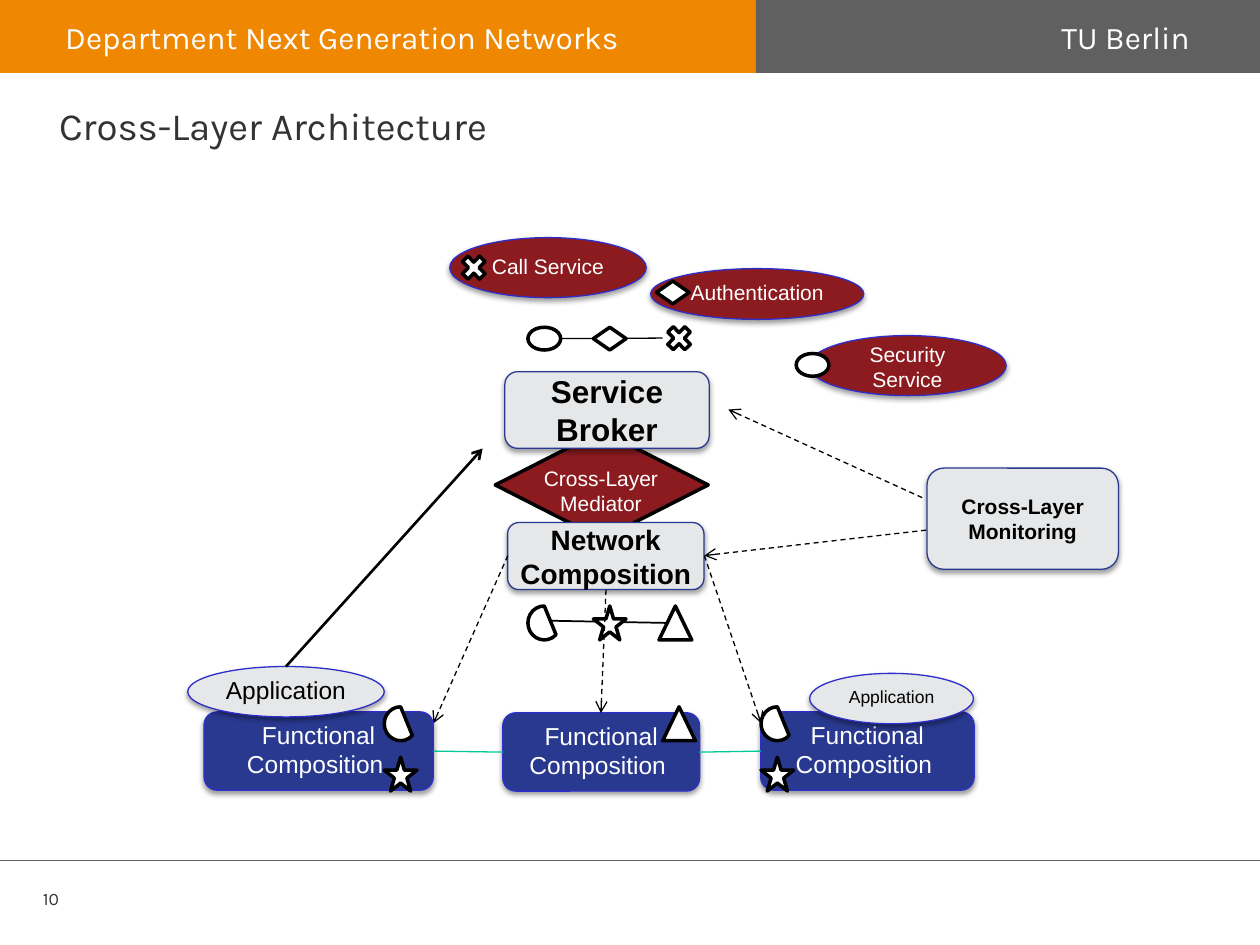
from dataclasses import dataclass

from lxml.etree import SubElement
from pptx import Presentation
from pptx.dml.color import RGBColor
from pptx.enum.dml import MSO_LINE
from pptx.enum.shapes import MSO_CONNECTOR, MSO_SHAPE
from pptx.enum.text import MSO_ANCHOR, MSO_AUTO_SIZE, PP_ALIGN
from pptx.oxml.ns import qn
from pptx.util import Pt

COLORS = {
    "orange": "F08700", "gray": "606060", "ink": "333333", "black": "000000",
    "white": "FFFFFF", "navy": "293990", "blue": "2E2ECB", "red": "8C1B20",
    "silver": "E6E7E8", "green": "00C896",
}
ROUND, OVAL, DIAMOND = MSO_SHAPE.ROUNDED_RECTANGLE, MSO_SHAPE.OVAL, MSO_SHAPE.DIAMOND
CROSS, CHORD = MSO_SHAPE.MATH_MULTIPLY, MSO_SHAPE.CHORD
STAR, TRIANGLE = MSO_SHAPE.STAR_5_POINT, MSO_SHAPE.ISOSCELES_TRIANGLE
ICON_WIDTH, ICON_HEIGHT, FLAT_HEIGHT = 18.7, 19.4, 13


@dataclass
class Look:
    fill: str
    line: str
    ink: str
    bold: bool = False
    insets: tuple = (0, 1.44, 0, 3.6)


@dataclass
class Node:
    kind: int
    text: str
    frame: tuple
    size: float
    look: Look


@dataclass
class Icon:
    kind: int
    left: float
    top: float


@dataclass
class Link:
    start: tuple
    end: tuple
    width: float = 0.75
    color: str = "black"
    dashed: bool = False
    arrow: bool = False


@dataclass
class Label:
    text: str
    frame: tuple
    size: float
    color: str
    font: str = "Karla"
    align: int = PP_ALIGN.LEFT
    insets: tuple = (7.2, 3.6, 7.2, 3.6)
    wrap: bool = True


FUNCTION = Look("navy", "blue", "white")
APPLICATION = Look("silver", "blue", "black")
SERVICE = Look("red", "blue", "white")
LAYER = Look("silver", "navy", "black", True, (7.2, 3.6, 7.2, 3.6))
NETWORK = Look("silver", "navy", "black", True, (2.88, 3.6, 2.88, 3.6))
LOW_SERVICE = Look("red", "blue", "white", insets=(0, 1.44, 0, 0.72))

BACK_LINKS = [
    Link((527, 284.4), (416.2, 234), dashed=True, arrow=True),
    Link((565.2, 298.8), (402.5, 317.5), dashed=True, arrow=True),
    Link((320.4, 193.5), (378.7, 193.2)),
    Link((314.6, 354.7), (381.6, 356), 1),
]
FRONT_LINKS = [
    Link((247.7, 429.2), (287.3, 429.8), color="green"),
    Link((399.6, 429.8), (434.9, 429.2), color="green"),
    Link((163.4, 380.9), (275.8, 256.3), 1.5, arrow=True),
    Link((290.2, 317.5), (247.7, 413.3), dashed=True, arrow=True),
    Link((346.3, 337), (343.4, 407.5), dashed=True, arrow=True),
    Link((402.5, 317.5), (434.9, 413.3), dashed=True, arrow=True),
]
NODES = [
    Node(ROUND, "Functional Composition ", (116.6, 406.8, 131, 44.8), 14, FUNCTION),
    Node(OVAL, "Application", (107.3, 380.9, 112.3, 28.8), 14, APPLICATION),
    Node(OVAL, "Call Service", (257, 135.8, 112.3, 34.3), 12, SERVICE),
    Node(ROUND, "Service Broker", (288.5, 212.4, 116.8, 43.8), 18, LAYER),
    Node(ROUND, "Network Composition", (290.1, 298.6, 112.2, 38.3), 16, NETWORK),
    Node(ROUND, "Functional Composition ", (287.3, 407.3, 112.5, 44.8), 14, FUNCTION),
    Node(ROUND, "Functional Composition ", (434.7, 406.8, 122, 44.8), 14, FUNCTION),
    Node(OVAL, "Authentication", (371.8, 153.5, 121.8, 29), 12, SERVICE),
    Node(OVAL, "Application", (462.7, 384.8, 93.6, 28.8), 10, APPLICATION),
    Node(ROUND, "Cross-Layer Monitoring", (529.7, 267.5, 109.4, 57.8), 12, LAYER),
    Node(OVAL, "Security Service", (462.2, 191.8, 112.8, 34.3), 12, LOW_SERVICE),
]
CHAIN_ICONS = [
    Icon(TRIANGLE, 376.6, 346.3), Icon(OVAL, 301.7, 187), Icon(STAR, 339.1, 346.3),
    Icon(CHORD, 301.7, 346.3), Icon(DIAMOND, 339.1, 187), Icon(CROSS, 378.7, 183.6),
]
BADGES = [
    Icon(DIAMOND, 375.1, 160.6), Icon(CROSS, 261.4, 143.3),
    Icon(CHORD, 219.6, 403.9), Icon(STAR, 219.6, 432.7),
    Icon(CHORD, 434.9, 403.9), Icon(STAR, 434.9, 432.7),
    Icon(TRIANGLE, 378.7, 403.9), Icon(OVAL, 455, 202),
]
LABELS = [
    Label("10", (24.5, 504.7, 325.4, 17.3), 10, "ink", insets=(0, 0, 0, 0)),
    Label("TU Berlin", (439.9, 6.5, 247, 29), 18, "white", align=PP_ALIGN.RIGHT),
    Label("Department Next Generation Networks", (30.2, 6.5, 373, 29), 18, "white"),
]
MEDIATOR = Label("Cross-Layer\nMediator", (301.7, 261.4, 83.5, 38.2), 12, "white",
                 "Arial", PP_ALIGN.CENTER, wrap=False)


def color(name: str) -> RGBColor:
    return RGBColor.from_string(COLORS[name])


def write(box, text: str, size: float, ink: str, font: str, align: int,
          insets: tuple, bold: bool = False, wrap: bool = True) -> None:
    frame = box.text_frame
    frame.auto_size = MSO_AUTO_SIZE.NONE
    frame.word_wrap = wrap
    frame.vertical_anchor = MSO_ANCHOR.MIDDLE
    (frame.margin_left, frame.margin_top,
     frame.margin_right, frame.margin_bottom) = map(Pt, insets)
    para = frame.paragraphs[0]
    para.alignment = align
    for index, line in enumerate(text.split("\n")):
        if index:
            para.add_line_break()
        span = para.add_run()
        span.text = line
        span.font.name = font
        span.font.size = Pt(size)
        span.font.bold = bold
        span.font.color.rgb = color(ink)


def draw_shape(page, kind: int, frame: tuple, fill: str, line: str = "", width: float = 0):
    shape = page.shapes.add_shape(kind, *map(Pt, frame))
    shape.shadow.inherit = False
    shape.fill.solid()
    shape.fill.fore_color.rgb = color(fill)
    if line:
        shape.line.color.rgb = color(line)
        shape.line.width = Pt(width)
    else:
        shape.line.fill.background()
    return shape


def add_shadow(shape) -> None:
    effects = shape.element.spPr.find(qn("a:effectLst"))
    shadow = SubElement(effects, qn("a:outerShdw"), blurRad=str(Pt(3.1)),
                        dist=str(Pt(1.6)), dir="5400000", rotWithShape="0")
    tone = SubElement(shadow, qn("a:srgbClr"), val=COLORS["black"])
    SubElement(tone, qn("a:alpha"), val="38000")


def draw_node(page, node: Node) -> None:
    look = node.look
    shape = draw_shape(page, node.kind, node.frame, look.fill, look.line, 0.75)
    add_shadow(shape)
    write(shape, node.text, node.size, look.ink, "Arial", PP_ALIGN.CENTER,
          look.insets, look.bold)


def draw_icon(page, icon: Icon) -> None:
    height = FLAT_HEIGHT if icon.kind in (OVAL, DIAMOND) else ICON_HEIGHT
    draw_shape(page, icon.kind, (icon.left, icon.top, ICON_WIDTH, height),
               "white", "black", 2)


def draw_link(page, link: Link) -> None:
    connector = page.shapes.add_connector(
        MSO_CONNECTOR.STRAIGHT, *map(Pt, link.start + link.end))
    connector.line.color.rgb = color(link.color)
    connector.line.width = Pt(link.width)
    if link.dashed:
        connector.line.dash_style = MSO_LINE.DASH
    if link.arrow:
        SubElement(connector.line._get_or_add_ln(), qn("a:tailEnd"), type="arrow")
    SubElement(connector._element.spPr, qn("a:effectLst"))


def draw_label(page, label: Label) -> None:
    box = page.shapes.add_textbox(*map(Pt, label.frame))
    write(box, label.text, label.size, label.color, label.font, label.align,
          label.insets, wrap=label.wrap)


def draw_all(page, draw, items: list) -> None:
    for item in items:
        draw(page, item)


def main() -> None:
    deck = Presentation()
    deck.slide_width, deck.slide_height = Pt(720), Pt(540)
    page = deck.slides.add_slide(deck.slide_layouts[5])
    title = page.shapes.title
    title.left, title.top, title.width, title.height = map(Pt, (33.8, 56.9, 652.3, 28.8))
    write(title, "Cross-Layer Architecture", 22, "ink", "Karla", PP_ALIGN.LEFT, (0, 0, 7.2, 0))

    draw_shape(page, MSO_SHAPE.RECTANGLE, (0, 0, 432, 41.7), "orange")
    draw_shape(page, MSO_SHAPE.RECTANGLE, (432, 0, 288, 41.7), "gray")
    draw_link(page, Link((0, 491.8), (720, 491.8), 0.5, "gray"))
    draw_all(page, draw_label, LABELS)

    draw_all(page, draw_link, BACK_LINKS)
    draw_shape(page, DIAMOND, (283, 246.2, 121.7, 61.9), "red", "black", 2)
    draw_label(page, MEDIATOR)
    draw_all(page, draw_node, NODES)
    draw_all(page, draw_icon, CHAIN_ICONS)
    draw_all(page, draw_link, FRONT_LINKS)
    draw_all(page, draw_icon, BADGES)
    deck.save("out.pptx")


if __name__ == "__main__":
    main()
